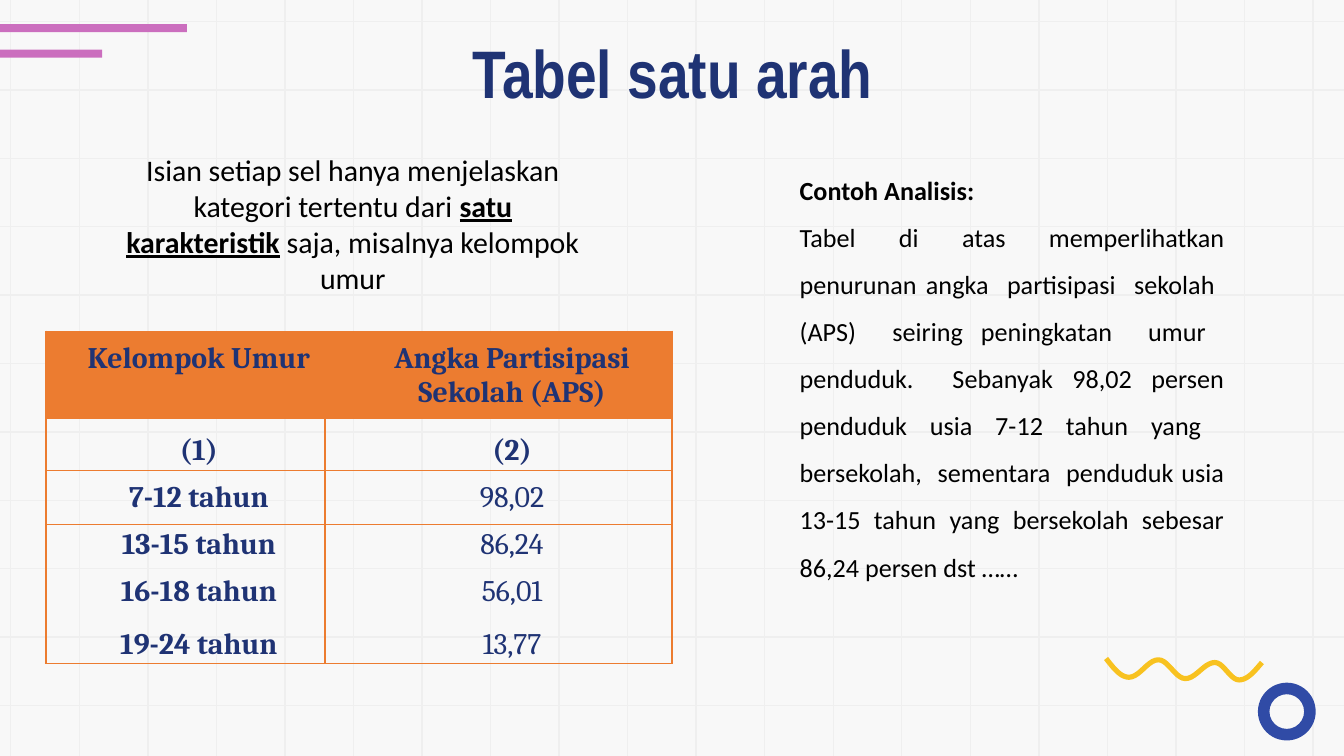
from math import cos, pi, sin

from lxml import etree
from pptx import Presentation
from pptx.dml.color import RGBColor
from pptx.enum.shapes import MSO_CONNECTOR, MSO_SHAPE
from pptx.enum.text import MSO_ANCHOR, MSO_AUTO_SIZE, PP_ALIGN
from pptx.oxml.ns import qn
from pptx.util import Inches, Pt

WIDTH = 10
HEIGHT = WIDTH * 9 / 16
PAPER = RGBColor(0xF8, 0xF8, 0xF8)
GRID = RGBColor(0xEF, 0xEF, 0xEF)
PINK = RGBColor(0xCB, 0x6E, 0xBE)
BLUE = RGBColor(0x30, 0x4B, 0xA6)
NAVY = RGBColor(0x1F, 0x33, 0x74)
YELLOW = RGBColor(0xF8, 0xC2, 0x20)
ORANGE = RGBColor(0xEC, 0x7C, 0x30)
BLACK = RGBColor(0, 0, 0)

HEADER = ["Kelompok Umur", "Angka Partisipasi\nSekolah (APS)"]
ROWS = [
    HEADER,
    ["(1)", "(2)"],
    ["7-12 tahun", "98,02"],
    ["13-15 tahun", "86,24"],
    ["16-18 tahun", "56,01"],
    ["19-24 tahun", "13,77"],
]
ROW_HEIGHTS = [0.66, 0.34, 0.4, 0.35, 0.35, 0.3]
TOP_MARGINS = [0.08, 0.07, 0.08, 0.03, 0.03, 0.03]
LOOSE_ROWS = (1, 5)
RULED_ROWS = (2, 3)
COLUMN_WIDTHS = [2.08, 2.58]

INTRO = [
    ("Isian setiap sel hanya menjelaskan kategori tertentu dari ", {}),
    ("satu karakteristik", {"bold": True, "underline": True}),
    (" saja, misalnya kelompok umur", {}),
]
ANALYSIS = (
    "Tabel di atas memperlihatkan penurunan angka  partisipasi  sekolah  (APS)  seiring "
    "peningkatan  umur  penduduk.  Sebanyak 98,02 persen penduduk usia 7-12 tahun yang  "
    "bersekolah,  sementara  penduduk usia 13-15 tahun yang bersekolah sebesar 86,24 persen "
    "dst ……"
)


def add_run(paragraph, text, color, **formats):
    run = paragraph.add_run()
    run.text = text
    run.font.color.rgb = color
    for name, value in formats.items():
        setattr(run.font, name, value)


def add_text_box(slide, left, top, width, height, margin=0.05):
    shape = slide.shapes.add_textbox(Inches(left), Inches(top), Inches(width), Inches(height))
    frame = shape.text_frame
    frame.word_wrap = True
    frame.margin_top = frame.margin_bottom = Inches(margin)
    return frame


def add_grid_line(slide, x1, y1, x2, y2):
    line = slide.shapes.add_connector(
        MSO_CONNECTOR.STRAIGHT, Inches(x1), Inches(y1), Inches(x2), Inches(y2))
    line.line.color.rgb = GRID
    line.line.width = Pt(0.75)
    etree.SubElement(line._element.spPr, qn("a:effectLst"))


def add_grid(slide, left=0.08, top=0.16, right=9.77, bottom=5.25):
    rows, columns = 11, 20
    for i in range(rows):
        y = top + i * (bottom - top) / (rows - 1)
        add_grid_line(slide, 0, y, WIDTH, y)
    for i in range(columns):
        x = left + i * (right - left) / (columns - 1)
        add_grid_line(slide, x, 0, x, HEIGHT)


def add_filled_shape(slide, kind, left, top, width, height, color):
    shape = slide.shapes.add_shape(
        kind, Inches(left), Inches(top), Inches(width), Inches(height))
    shape.shadow.inherit = False
    shape.fill.solid()
    shape.fill.fore_color.rgb = color
    shape.line.fill.background()
    return shape


def add_squiggle(slide, left, top, steps=10):
    """Draw a wave through its turning points, steep at both ends."""
    turns = [(0, 0), (0.17, 0.14), (0.39, 0.01), (0.59, 0.15),
             (0.81, 0.03), (0.99, 0.16), (1.16, 0.03)]
    points = []
    last = len(turns) - 2
    for index, ((x1, y1), (x2, y2)) in enumerate(zip(turns, turns[1:])):
        for step in range(steps + 1):
            t = step / steps
            if index == 0:
                ease = sin(t * pi / 2)
            elif index == last:
                ease = 1 - cos(t * pi / 2)
            else:
                ease = (1 - cos(t * pi)) / 2
            points.append((Inches(left + x1 + (x2 - x1) * t),
                           Inches(top + y1 + (y2 - y1) * ease)))
    builder = slide.shapes.build_freeform(*points[0])
    builder.add_line_segments(points[1:], close=False)
    wave = builder.convert_to_shape()
    wave.shadow.inherit = False
    wave.fill.background()
    wave.line.color.rgb = YELLOW
    wave.line.width = Pt(2.75)


def add_decorations(slide):
    for top, width in ((0.18, 1.39), (0.37, 0.76)):
        add_filled_shape(slide, MSO_SHAPE.RECTANGLE, 0, top, width, 0.06, PINK)
    ring = add_filled_shape(slide, MSO_SHAPE.DONUT, 9.36, 5.08, 0.43, 0.43, BLUE)
    ring.adjustments[0] = 0.2
    add_squiggle(slide, 8.23, 4.9)


def add_title(slide, left, top, width, height):
    paragraph = add_text_box(slide, left, top, width, height, margin=0.1).paragraphs[0]
    paragraph.alignment = PP_ALIGN.CENTER
    add_run(paragraph, "Tabel satu arah", NAVY, name="Arial Narrow", size=Pt(36), bold=True)


def set_borders(cell, visible):
    """Give the named sides an orange line, thinner across, and the others none."""
    properties = cell._tc.get_or_add_tcPr()
    for index, side in enumerate(("lnL", "lnR", "lnT", "lnB")):
        width = Pt(1) if side in ("lnL", "lnR") else Pt(0.5)
        line = etree.Element(qn(f"a:{side}"), w=str(width))
        if side in visible:
            fill = etree.SubElement(line, qn("a:solidFill"))
            etree.SubElement(fill, qn("a:srgbClr"), val=str(ORANGE))
        else:
            etree.SubElement(line, qn("a:noFill"))
        properties.insert(index, line)


def fill_cell(cell, text, row, column):
    cell.margin_left, cell.margin_top = Inches(0.2), Inches(TOP_MARGINS[row])
    cell.margin_right = cell.margin_bottom = 0
    cell.vertical_anchor = MSO_ANCHOR.TOP
    frame = cell.text_frame
    for index, line in enumerate(text.split("\n")):
        paragraph = frame.add_paragraph() if index else frame.paragraphs[0]
        paragraph.alignment = PP_ALIGN.CENTER
        if row in LOOSE_ROWS:
            paragraph.line_spacing = 1.16
        add_run(paragraph, line, NAVY, name="Cambria", size=Pt(16),
                bold=row < 2 or column == 0)

    if row == 0:
        cell.fill.solid()
        cell.fill.fore_color.rgb = ORANGE
        visible = {"lnL" if column == 0 else "lnR"}
    else:
        cell.fill.background()
        visible = {"lnL", "lnR"}
        if row in RULED_ROWS:
            visible.add("lnT")
        if row + 1 in RULED_ROWS or row == len(ROWS) - 1:
            visible.add("lnB")
    set_borders(cell, visible)


def add_age_table(slide, left, top):
    table = slide.shapes.add_table(
        len(ROWS), len(COLUMN_WIDTHS), Inches(left), Inches(top),
        Inches(sum(COLUMN_WIDTHS)), Inches(sum(ROW_HEIGHTS))).table
    table.first_row = table.horz_banding = False
    for column, width in zip(table.columns, COLUMN_WIDTHS):
        column.width = Inches(width)
    for row, (texts, height) in enumerate(zip(ROWS, ROW_HEIGHTS)):
        table.rows[row].height = Inches(height)
        for column, text in enumerate(texts):
            fill_cell(table.cell(row, column), text, row, column)


def add_intro(slide, left, top, width, height):
    frame = add_text_box(slide, left, top, width, height)
    frame.auto_size = MSO_AUTO_SIZE.SHAPE_TO_FIT_TEXT
    paragraph = frame.paragraphs[0]
    paragraph.alignment = PP_ALIGN.CENTER
    for text, formats in INTRO:
        add_run(paragraph, text, BLACK, name="Calibri", size=Pt(16), **formats)


def add_analysis(slide, left, top, width, height):
    frame = add_text_box(slide, left, top, width, height)
    frame.auto_size = MSO_AUTO_SIZE.SHAPE_TO_FIT_TEXT
    frame.margin_left = Inches(0.11)
    heading, body = frame.paragraphs[0], frame.add_paragraph()
    body.line_spacing = 1.5
    for paragraph, text in ((heading, "Contoh Analisis:"), (body, ANALYSIS)):
        paragraph.alignment = PP_ALIGN.JUSTIFY
        add_run(paragraph, text, BLACK, name="Calibri", size=Pt(14), bold=paragraph is heading)


def main():
    presentation = Presentation()
    presentation.slide_width, presentation.slide_height = Inches(WIDTH), Inches(HEIGHT)
    slide = presentation.slides.add_slide(presentation.slide_layouts[6])
    slide.background.fill.solid()
    slide.background.fill.fore_color.rgb = PAPER
    add_grid(slide)
    add_decorations(slide)
    add_title(slide, 0.79, 0.13, 8.43, 0.63)
    add_age_table(slide, 0.34, 2.46)
    add_intro(slide, 0.79, 1.08, 3.67, 1.18)
    add_analysis(slide, 5.84, 1.25, 3.37, 3.13)
    presentation.save("out.pptx")


if __name__ == "__main__":
    main()
